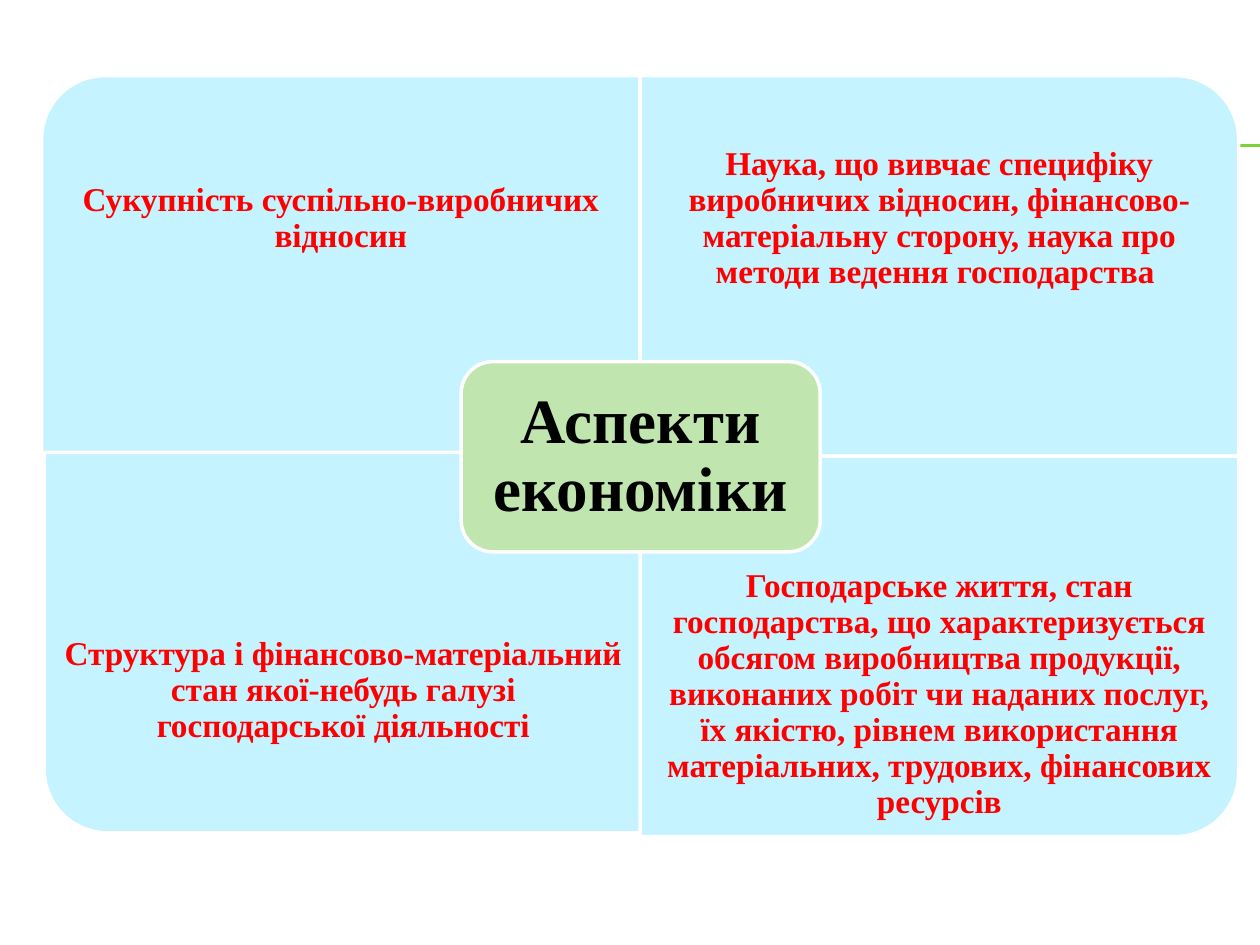
"""Build a slide with four aspects of the economy around a central title."""
from lxml import etree
from pptx import Presentation
from pptx.dml.color import RGBColor
from pptx.enum.shapes import MSO_CONNECTOR, MSO_SHAPE
from pptx.enum.text import MSO_ANCHOR, PP_ALIGN
from pptx.oxml.ns import qn
from pptx.util import Inches, Pt

STRAIGHT = MSO_CONNECTOR.STRAIGHT
PANEL_SHAPE = MSO_SHAPE.ROUND_1_RECTANGLE
CENTER_SHAPE = MSO_SHAPE.ROUNDED_RECTANGLE
MIDDLE = MSO_ANCHOR.MIDDLE
CENTER = PP_ALIGN.CENTER

COLORS = {
    "panel": "C5F3FF",
    "center": "C0E5AF",
    "outline": "FFFFFF",
    "rule": "7FD13B",
    "aspect": "FF0000",
    "title": "000000",
}
FONT = "Times New Roman"
TITLE = "Аспекти економіки"
PANEL_WIDTH, PANEL_HEIGHT, TEXT_HEIGHT = 4.75, 3.02, 2.27
ASPECTS = [
    {"left": 0.33, "top": 0.6, "text_top": 0.6, "rotation": 270,
     "text": "Сукупність суспільно-виробничих відносин"},
    {"left": 5.08, "top": 0.6, "text_top": 0.6, "rotation": 0,
     "text": "Наука, що вивчає специфіку виробничих відносин, "
             "фінансово-матеріальну сторону, наука про методи ведення господарства "},
    {"left": 0.35, "top": 3.59, "text_top": 4.35, "rotation": 180,
     "text": "Структура і фінансово-матеріальний стан якої-небудь галузі "
             "господарської діяльності"},
    {"left": 5.08, "top": 3.62, "text_top": 4.38, "rotation": 90,
     "text": "Господарське життя, стан господарства, що характеризується обсягом "
             "виробництва продукції, виконаних робіт чи наданих послуг, їх якістю, "
             "рівнем використання матеріальних, трудових, фінансових ресурсів"},
]
CENTER_BOX = (3.66, 2.87, 2.85, 1.51)
CENTER_INSET = 0.07
RULE_LEFT, RULE_RIGHT, RULE_TOPS = 0.56, 10, (1.15, 1.16)


def rgb(name):
    return RGBColor.from_string(COLORS[name])


def add_rule(page, top):
    rule = page.shapes.add_connector(
        STRAIGHT, Inches(RULE_LEFT), Inches(top), Inches(RULE_RIGHT), Inches(top))
    rule.line.color.rgb = rgb("rule")
    rule.line.width = Pt(0.75)
    etree.SubElement(rule._element.spPr, qn("a:effectLst"))


def add_block(page, kind, bounds, fill, rotation=0):
    left, top, width, height = bounds
    if rotation % 180:
        left += (width - height) / 2
        top += (height - width) / 2
        width, height = height, width
    block = page.shapes.add_shape(kind, *map(Inches, (left, top, width, height)))
    block.rotation = rotation
    block.shadow.inherit = False
    block.fill.solid()
    block.fill.fore_color.rgb = rgb(fill)
    block.line.color.rgb = rgb("outline")
    block.line.width = Pt(2)


def add_text(page, text, bounds, size, color):
    box = page.shapes.add_textbox(*map(Inches, bounds))
    frame = box.text_frame
    frame.word_wrap = True
    frame.vertical_anchor = MIDDLE
    frame.margin_left = frame.margin_right = Inches(0.15)
    frame.margin_top = frame.margin_bottom = Inches(0.15)
    para = frame.paragraphs[0]
    para.alignment = CENTER
    para.line_spacing = 0.9
    span = para.add_run()
    span.text = text
    span.font.name = FONT
    span.font.size = Pt(size)
    span.font.bold = True
    span.font.color.rgb = rgb(color)


def main():
    deck = Presentation()
    deck.slide_width, deck.slide_height = Inches(10), Inches(7.5)
    page = deck.slides.add_slide(deck.slide_layouts[6])
    for top in RULE_TOPS:
        add_rule(page, top)
    for aspect in ASPECTS:
        left = aspect["left"]
        add_block(page, PANEL_SHAPE, (left, aspect["top"], PANEL_WIDTH, PANEL_HEIGHT),
                  "panel", aspect["rotation"])
        add_text(page, aspect["text"], (left, aspect["text_top"], PANEL_WIDTH, TEXT_HEIGHT),
                 size=19, color="aspect")
    add_block(page, CENTER_SHAPE, CENTER_BOX, "center")
    left, top, width, height = CENTER_BOX
    title_bounds = (left + CENTER_INSET, top + CENTER_INSET,
                    width - 2 * CENTER_INSET, height - 2 * CENTER_INSET)
    add_text(page, TITLE, title_bounds, size=36, color="title")
    deck.save("out.pptx")


if __name__ == "__main__":
    main()
